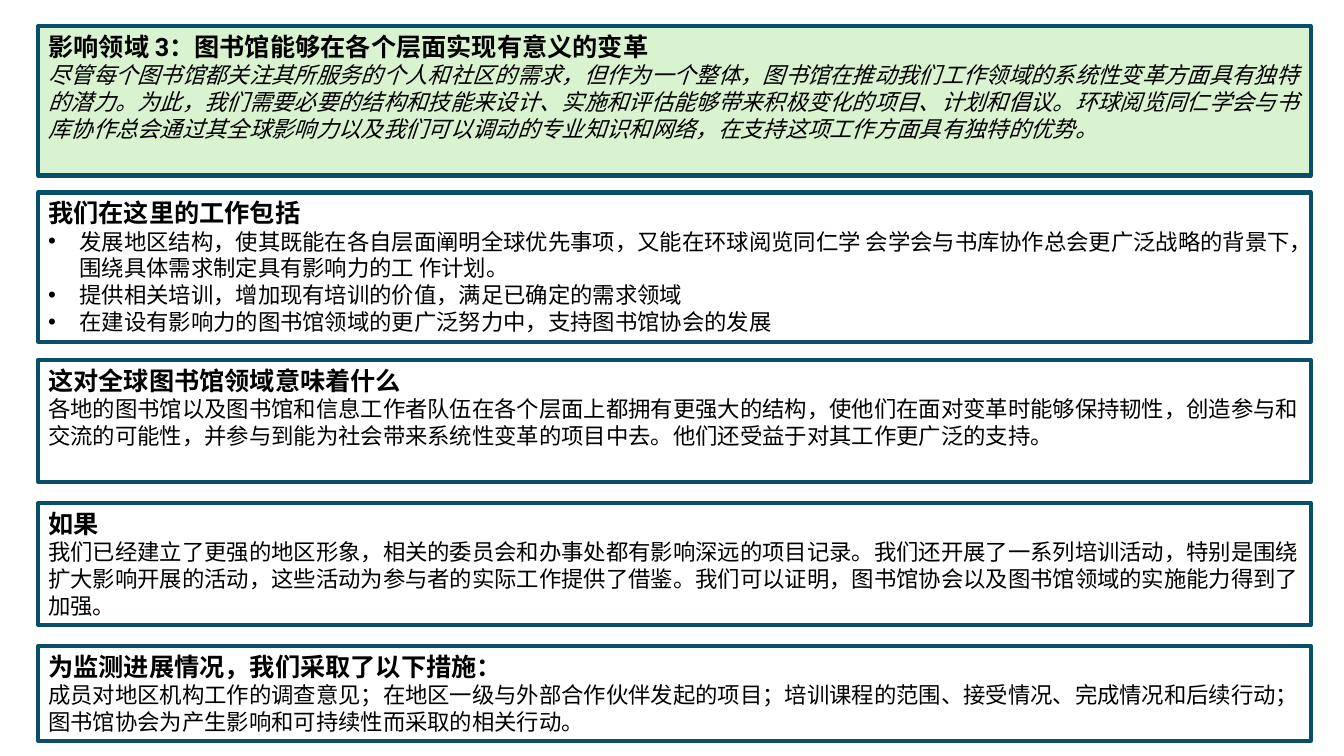
from dataclasses import dataclass

from lxml import etree
from pptx import Presentation
from pptx import util as u
from pptx.dml.color import RGBColor
from pptx.enum import shapes, text
from pptx.oxml import ns
from pptx.shapes.autoshape import Shape
from pptx.text.text import _Paragraph

PX = u.Inches(1) // 100  # lengths below are px, 100 to the inch
SLIDE_WIDTH, SLIDE_HEIGHT = 1333, 750
PANEL_LEFT, PANEL_WIDTH = 38, 1262
BULLET_INDENT = 31


@dataclass(frozen=True)
class Theme:
    font: str = "Roboto"
    ink: RGBColor = RGBColor(0x00, 0x00, 0x00)
    border: RGBColor = RGBColor(0x08, 0x4F, 0x6A)
    highlight: RGBColor = RGBColor(0xD9, 0xF2, 0xD0)
    paper: RGBColor = RGBColor(0xFF, 0xFF, 0xFF)
    heading_size: int = 18
    body_size: int = 16
    border_width: int = 3


THEME = Theme()


@dataclass(frozen=True)
class Panel:
    top: int
    height: int
    heading: str
    body: tuple[str, ...]
    fill: RGBColor = THEME.paper
    italic: bool = False
    bulleted: bool = False


IMPACT_AREA = Panel(
    26, 148, "影响领域 3：图书馆能够在各个层面实现有意义的变革",
    ("尽管每个图书馆都关注其所服务的个人和社区的需求，但作为一个整体，图书馆在推动我们工作领域的系统性变革方面具有独特的潜力。"
     "为此，我们需要必要的结构和技能来设计、实施和评估能够带来积极变化的项目、计划和倡议。"
     "环球阅览同仁学会与书库协作总会通过其全球影响力以及我们可以调动的专业知识和网络，在支持这项工作方面具有独特的优势。",),
    fill=THEME.highlight, italic=True,
)
DETAILS = (
    Panel(
        191, 148, "我们在这里的工作包括",
        ("发展地区结构，使其既能在各自层面阐明全球优先事项，又能在环球阅览同仁学 会学会与书库协作总会更广泛战略的背景下，"
         "围绕具体需求制定具有影响力的工 作计划。",
         "提供相关培训，增加现有培训的价值，满足已确定的需求领域",
         "在建设有影响力的图书馆领域的更广泛努力中，支持图书馆协会的发展"),
        bulleted=True,
    ),
    Panel(
        357, 121, "这对全球图书馆领域意味着什么",
        ("各地的图书馆以及图书馆和信息工作者队伍在各个层面上都拥有更强大的结构，使他们在面对变革时能够保持韧性，"
         "创造参与和交流的可能性，并参与到能为社会带来系统性变革的项目中去。他们还受益于对其工作更广泛的支持。",),
    ),
    Panel(
        499, 121, "如果",
        ("我们已经建立了更强的地区形象，相关的委员会和办事处都有影响深远的项目记录。"
         "我们还开展了一系列培训活动，特别是围绕扩大影响开展的活动，这些活动为参与者的实际工作提供了借鉴。"
         "我们可以证明，图书馆协会以及图书馆领域的实施能力得到了加强。",),
    ),
    Panel(
        641, 94, "为监测进展情况，我们采取了以下措施：",
        ("成员对地区机构工作的调查意见；在地区一级与外部合作伙伴发起的项目；"
         "培训课程的范围、接受情况、完成情况和后续行动；图书馆协会为产生影响和可持续性而采取的相关行动。",),
    ),
)


def apply(target: object, values: dict[str, object]) -> None:
    for name, value in values.items():
        setattr(target, name, value)


def write(paragraph: _Paragraph, words: str, size: int,
          bold: bool = False, italic: bool = False) -> None:
    paragraph.alignment = text.PP_ALIGN.LEFT
    run = paragraph.add_run()
    run.text = words
    apply(run.font, {"name": THEME.font, "size": u.Pt(size),
                     "bold": bold, "italic": italic})
    run.font.color.rgb = THEME.ink


def add_bullet(paragraph: _Paragraph) -> None:
    properties = paragraph._p.get_or_add_pPr()
    properties.set("marL", str(BULLET_INDENT * PX))
    properties.set("indent", str(-BULLET_INDENT * PX))
    etree.SubElement(properties, ns.qn("a:buFont"), typeface="Arial")
    etree.SubElement(properties, ns.qn("a:buChar"), char="•")


def draw_panel(box: Shape, panel: Panel) -> None:
    """Place, colour and fill in one bordered text panel."""
    apply(box, {"left": PANEL_LEFT * PX, "top": panel.top * PX,
                "width": PANEL_WIDTH * PX, "height": panel.height * PX})
    box.shadow.inherit = False
    box.fill.solid()
    box.fill.fore_color.rgb = panel.fill
    box.line.color.rgb = THEME.border
    box.line.width = u.Pt(THEME.border_width)

    frame = box.text_frame
    apply(frame, {"word_wrap": True,
                  "auto_size": text.MSO_AUTO_SIZE.SHAPE_TO_FIT_TEXT,
                  "vertical_anchor": text.MSO_ANCHOR.TOP})
    write(frame.paragraphs[0], panel.heading, THEME.heading_size, bold=True)
    for words in panel.body:
        paragraph = frame.add_paragraph()
        write(paragraph, words, THEME.body_size, italic=panel.italic)
        if panel.bulleted:
            add_bullet(paragraph)


def main() -> None:
    deck = Presentation()
    apply(deck, {"slide_width": SLIDE_WIDTH * PX,
                 "slide_height": SLIDE_HEIGHT * PX})
    slide = deck.slides.add_slide(deck.slide_layouts.get_by_name("Title Only"))
    draw_panel(slide.shapes.title, IMPACT_AREA)
    for panel in DETAILS:
        box = slide.shapes.add_shape(shapes.MSO_SHAPE.RECTANGLE, 0, 0, 0, 0)
        draw_panel(box, panel)
    deck.save("out.pptx")


if __name__ == "__main__":
    main()
